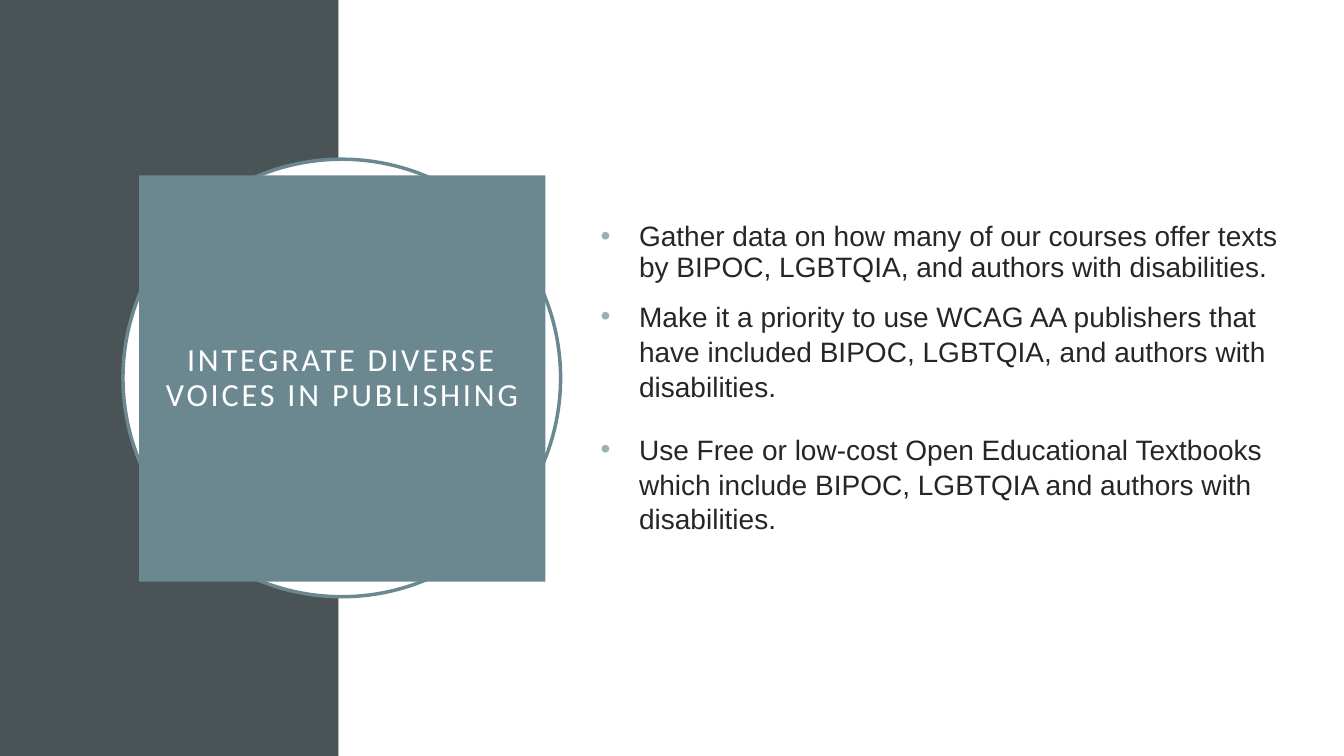
from dataclasses import dataclass

import pptx
import pptx.dml.color
import pptx.enum.shapes
import pptx.enum.text
import pptx.oxml
import pptx.oxml.ns
import pptx.util
from pptx.dml.color import RGBColor
from pptx.enum.shapes import MSO_SHAPE
from pptx.util import Inches

SLATE = RGBColor(0x4A, 0x53, 0x56)
TEAL = RGBColor(0x6B, 0x88, 0x91)
WHITE = RGBColor(0xFF, 0xFF, 0xFF)
INK = RGBColor(0x26, 0x26, 0x26)
BULLET = RGBColor(0x9B, 0xAF, 0xB5)


@dataclass
class Panel:
    kind: MSO_SHAPE
    left: float
    top: float
    width: float
    height: float
    fill: RGBColor
    outline: RGBColor | None = None


@dataclass
class Point:
    text: str
    line_spacing: float
    space_after: int


SIDEBAR = Panel(MSO_SHAPE.RECTANGLE, 0, 0, 3.36, 7.5, SLATE)
BACKDROP = Panel(MSO_SHAPE.RECTANGLE, 3.36, 0, 9.97, 7.5, WHITE)
RING = Panel(MSO_SHAPE.OVAL, 1.22, 1.58, 4.34, 4.34, WHITE, TEAL)
TITLE_CARD = Panel(MSO_SHAPE.RECTANGLE, 1.38, 1.74, 4.03, 4.03, TEAL)

POINTS = [
    Point("Gather data on how many of our courses offer texts by BIPOC, LGBTQIA, "
          "and authors with disabilities.", 0.93, 0),
    Point("Make it a priority to use WCAG AA publishers that have included BIPOC, "
          "LGBTQIA, and authors with disabilities.", 1.04, 10),
    Point("Use Free or low-cost Open Educational Textbooks which include BIPOC, "
          "LGBTQIA and authors with disabilities.", 1.04, 10),
]


def draw_panel(page: pptx.slide.Slide, panel: Panel) -> pptx.shapes.autoshape.Shape:
    shape = page.shapes.add_shape(
        panel.kind, Inches(panel.left), Inches(panel.top),
        Inches(panel.width), Inches(panel.height))
    shape.shadow.inherit = False
    shape.fill.solid()
    shape.fill.fore_color.rgb = panel.fill
    if panel.outline is None:
        shape.line.fill.background()
    else:
        shape.line.color.rgb = panel.outline
        shape.line.width = pptx.util.Pt(2.5)
    return shape


def add_span(para: pptx.text.text._Paragraph, text: str, font: str,
             size: int, color: RGBColor) -> pptx.text.text._Run:
    span = para.add_run()
    span.text = text
    span.font.name = font
    span.font.size = pptx.util.Pt(size)
    span.font.color.rgb = color
    return span


def write_title(card: pptx.shapes.autoshape.Shape, text: str) -> None:
    frame = card.text_frame
    frame.word_wrap = True
    frame.vertical_anchor = pptx.enum.text.MSO_ANCHOR.MIDDLE
    frame.margin_left = frame.margin_right = Inches(0.2)
    frame.margin_top = frame.margin_bottom = Inches(0.2)
    para = frame.paragraphs[0]
    para.alignment = pptx.enum.text.PP_ALIGN.CENTER
    para.line_spacing = 0.9
    span = add_span(para, text, "Calibri", 23, WHITE)
    span.font._element.set("spc", "200")


def add_bullet(para: pptx.text.text._Paragraph) -> None:
    properties = para._p.get_or_add_pPr()
    properties.set("marL", str(Inches(0.38)))
    properties.set("indent", str(Inches(-0.38)))
    namespace = pptx.oxml.ns.nsdecls("a")
    for markup in (
        f'<a:buClr {namespace}><a:srgbClr val="{BULLET}"/></a:buClr>',
        f'<a:buFont {namespace} typeface="Arial"/>',
        f'<a:buChar {namespace} char="•"/>',
    ):
        properties.append(pptx.oxml.parse_xml(markup))


def write_points(page: pptx.slide.Slide, points: list[Point]) -> None:
    box = page.shapes.add_textbox(Inches(5.86), Inches(0.89), Inches(7.18), Inches(5.73))
    frame = box.text_frame
    frame.word_wrap = True
    frame.vertical_anchor = pptx.enum.text.MSO_ANCHOR.MIDDLE
    for index, point in enumerate(points):
        para = frame.add_paragraph() if index else frame.paragraphs[0]
        para.line_spacing = point.line_spacing
        para.space_before = pptx.util.Pt(10)
        para.space_after = pptx.util.Pt(point.space_after)
        add_bullet(para)
        add_span(para, point.text, "Arial", 20, INK)


def main() -> None:
    deck = pptx.Presentation()
    deck.slide_width = Inches(13.33)
    deck.slide_height = Inches(7.5)
    page = deck.slides.add_slide(deck.slide_layouts[6])
    for panel in (SIDEBAR, BACKDROP, RING):
        draw_panel(page, panel)
    write_title(draw_panel(page, TITLE_CARD), "INTEGRATE DIVERSE VOICES IN PUBLISHING")
    write_points(page, POINTS)
    deck.save("out.pptx")


if __name__ == "__main__":
    main()
